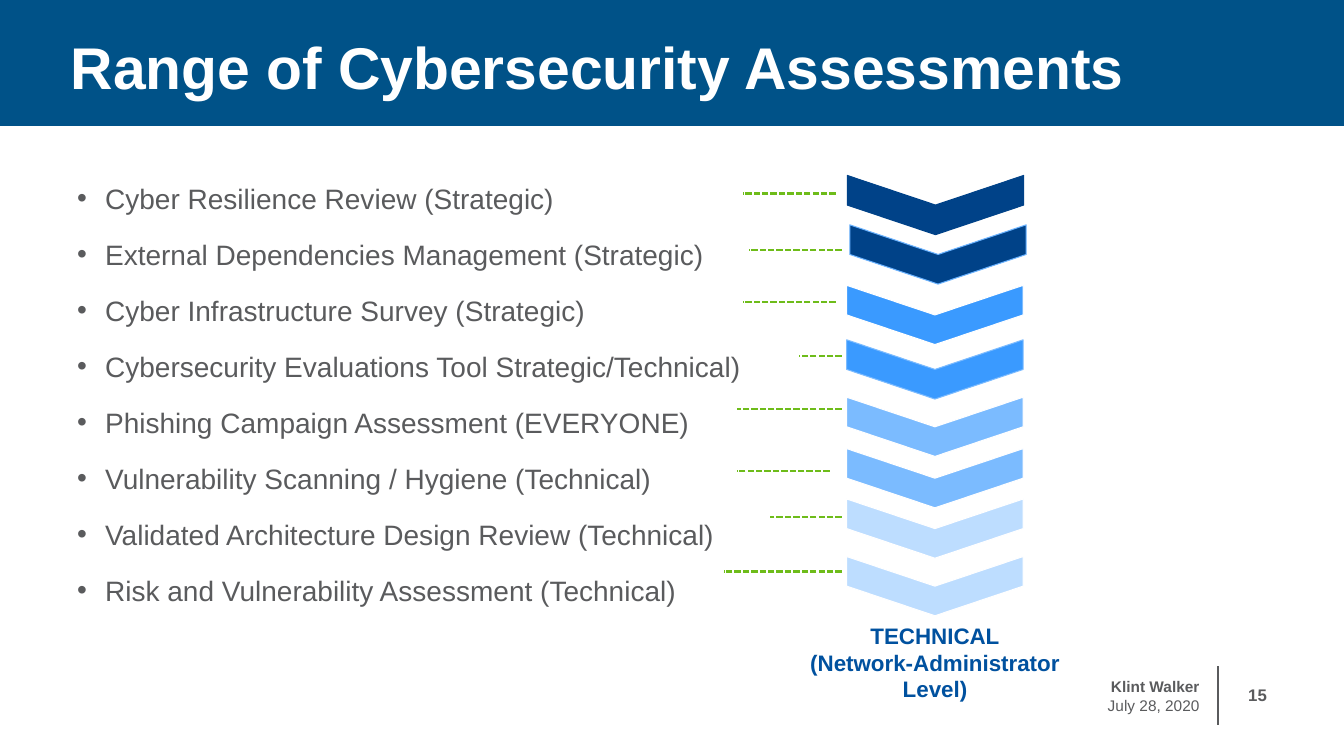
from dataclasses import dataclass

from lxml import etree
from pptx import Presentation
from pptx.dml.color import RGBColor
from pptx.enum import dml, shapes, text
from pptx.oxml.ns import qn
from pptx.util import Pt

TITLE = "Range of Cybersecurity Assessments"
CAPTION = ["TECHNICAL", "(Network-Administrator Level)"]
SPEAKER, DATE, PAGE_NUMBER = "Klint Walker", "July 28, 2020", "15"

# name, chevron centre (x, y), chevron fill, chevron outline, leader (from x, to x, y)
ASSESSMENTS = [
    ("Cyber Resilience Review (Strategic)",
     (668.2, 146.5), "004288", "004288", (596.9, 530.6, 138.2)),
    ("External Dependencies Management (Strategic)",
     (670, 181.8), "004288", "6BB3FF", (601.2, 535, 178.6)),
    ("Cyber Infrastructure Survey (Strategic)",
     (667.8, 225), "3A9AFF", "FFFFFF", (596.9, 530.6, 216)),
    ("Cybersecurity Evaluations Tool Strategic/Technical)",
     (667.8, 263.9), "3A9AFF", "7BBBFF", (601.2, 571, 254.2)),
    ("Phishing Campaign Assessment (EVERYONE)",
     (667.8, 304.9), "7BBBFF", "FFFFFF", (601.2, 526.3, 292.3)),
    ("Vulnerability Scanning / Hygiene (Technical)",
     (667.8, 341.6), "7BBBFF", "FFFFFF", (592.6, 526.3, 336.2)),
    ("Validated Architecture Design Review (Technical)",
     (667.8, 377.6), "BDDDFF", "FFFFFF", (601.2, 550, 369.4)),
    ("Risk and Vulnerability Assessment (Technical)",
     (667.8, 418.7), "BDDDFF", "FFFFFF", (601.2, 517, 408.2)),
]
CHEVRON_DEPTH, CHEVRON_SPAN = 42.3, 126
BULLET_INDENT = 20


@dataclass(frozen=True)
class Theme:
    font: str = "Arial"
    banner: str = "005288"
    white: str = "FFFFFF"
    gray: str = "5A5B5D"
    caption: str = "00519F"
    leader: str = "6EBC1A"
    title_size: int = 42
    body_size: int = 20
    caption_size: int = 16
    number_size: int = 12
    footer_size: int = 11


THEME = Theme()


def rgb(value):
    return RGBColor.from_string(value)


def add_bullet(para):
    properties = para._p.get_or_add_pPr()
    properties.set("marL", str(Pt(BULLET_INDENT)))
    properties.set("indent", str(-Pt(BULLET_INDENT)))
    etree.SubElement(properties, qn("a:buFont")).set("typeface", THEME.font)
    etree.SubElement(properties, qn("a:buChar")).set("char", "•")


def write(box, lines, size, color, bold=(False,), align=text.PP_ALIGN.LEFT,
          anchor=text.MSO_ANCHOR.TOP, gap=0, bullets=False):
    """Fill a box with one paragraph per line; bold flags repeat over the lines."""
    frame = box.text_frame
    frame.word_wrap = True
    frame.vertical_anchor = anchor
    for index, line in enumerate(lines):
        para = frame.paragraphs[0] if index == 0 else frame.add_paragraph()
        if bullets:
            add_bullet(para)
        para.alignment = align
        para.space_before = Pt(gap if index else 0)
        span = para.add_run()
        span.text = line
        span.font.name = THEME.font
        span.font.size = Pt(size)
        span.font.bold = bold[index % len(bold)]
        span.font.color.rgb = rgb(color)


def add_text(page, left, top, width, height, lines, **style):
    box = page.shapes.add_textbox(Pt(left), Pt(top), Pt(width), Pt(height))
    write(box, lines, **style)


def add_line(page, start, end, color, weight, dash=None):
    line = page.shapes.add_connector(
        shapes.MSO_CONNECTOR.STRAIGHT, *(Pt(value) for value in (*start, *end)))
    line.line.color.rgb = rgb(color)
    line.line.width = Pt(weight)
    if dash is not None:
        line.line.dash_style = dash
    etree.SubElement(line._element.spPr, qn("a:effectLst"))


def add_banner(page):
    banner = page.shapes.add_shape(
        shapes.MSO_SHAPE.RECTANGLE, 0, 0, Pt(960), Pt(90))
    banner.shadow.inherit = False
    banner.fill.solid()
    banner.fill.fore_color.rgb = rgb(THEME.banner)
    banner.line.fill.background()
    banner.text_frame.margin_left = Pt(50.4)
    banner.text_frame.margin_top = Pt(21.6)
    write(banner, [TITLE], THEME.title_size, THEME.white, bold=(True,))


def add_chevron(page, center, fill, outline):
    """Add a downward chevron, placed by its centre."""
    x, y = center
    chevron = page.shapes.add_shape(
        shapes.MSO_SHAPE.CHEVRON, Pt(x - CHEVRON_DEPTH / 2),
        Pt(y - CHEVRON_SPAN / 2), Pt(CHEVRON_DEPTH), Pt(CHEVRON_SPAN))
    chevron.rotation = 90
    chevron.shadow.inherit = False
    chevron.fill.solid()
    chevron.fill.fore_color.rgb = rgb(fill)
    chevron.line.color.rgb = rgb(outline)
    chevron.line.width = Pt(0.75)


def add_footer(page):
    style = dict(color=THEME.gray, align=text.PP_ALIGN.RIGHT,
                 anchor=text.MSO_ANCHOR.MIDDLE)
    add_line(page, (870, 476), (870, 518), THEME.gray, 1)
    add_text(page, 648, 476, 216, 42, [SPEAKER, DATE],
             size=THEME.footer_size, bold=(True, False), **style)
    add_text(page, 870, 485.5, 42, 22, [PAGE_NUMBER],
             size=THEME.number_size, bold=(True,), **style)


def main():
    deck = Presentation()
    deck.slide_width, deck.slide_height = Pt(960), Pt(540)
    page = deck.slides.add_slide(deck.slide_layouts[6])
    add_banner(page)
    add_text(page, 48, 126, 510, 300, [item[0] for item in ASSESSMENTS],
             size=THEME.body_size, color=THEME.gray, gap=16, bullets=True)
    for _, center, fill, outline, (start, end, y) in ASSESSMENTS:
        add_chevron(page, center, fill, outline)
        add_line(page, (start, y), (end, y), THEME.leader, 1.5,
                 dml.MSO_LINE.SQUARE_DOT)
    add_text(page, 571, 440.6, 193.7, 65.5, CAPTION, size=THEME.caption_size,
             color=THEME.caption, bold=(True,), align=text.PP_ALIGN.CENTER)
    add_footer(page)
    deck.save("out.pptx")


if __name__ == "__main__":
    main()
